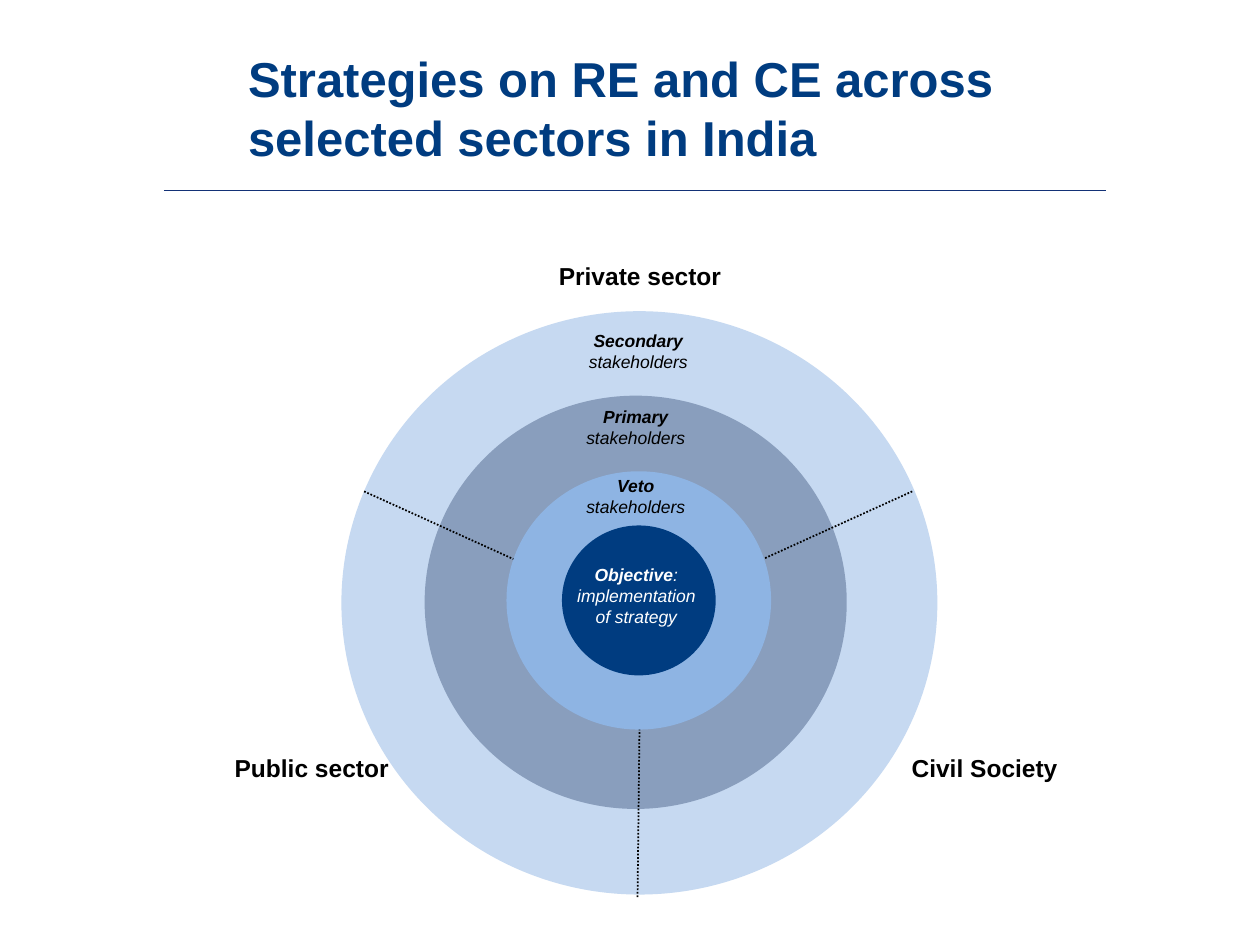
from lxml import etree
from pptx import Presentation
from pptx.dml.color import RGBColor
from pptx.enum.dml import MSO_LINE
from pptx.enum.shapes import MSO_CONNECTOR, MSO_SHAPE
from pptx.enum.text import MSO_ANCHOR, PP_ALIGN
from pptx.oxml.ns import qn
from pptx.util import Inches, Pt

ELLIPSE = MSO_SHAPE.OVAL
STRAIGHT = MSO_CONNECTOR.STRAIGHT
DOTTED = MSO_LINE.ROUND_DOT
LEFT, CENTER = PP_ALIGN.LEFT, PP_ALIGN.CENTER
TOP, MIDDLE = MSO_ANCHOR.TOP, MSO_ANCHOR.MIDDLE

COLORS = {
    "navy": "003C80",
    "rule": "133176",
    "secondary": "C6D9F1",
    "primary": "899EBD",
    "veto": "8EB4E3",
    "black": "000000",
    "white": "FFFFFF",
}


class SlideBuilder:
    """Holds the style and the current slide."""

    font = "Arial"

    def __init__(self, slide):
        self.slide = slide

    def color(self, name):
        return RGBColor.from_string(COLORS[name])

    def text(self, box, paragraphs, size, color="black", align=CENTER,
             anchor=TOP, wrap=False, side_inset=0.1):
        """Each paragraph is a list of (text, bold, italic) runs."""
        frame = self.slide.shapes.add_textbox(*map(Inches, box)).text_frame
        frame.word_wrap = wrap
        frame.vertical_anchor = anchor
        frame.margin_left = frame.margin_right = Inches(side_inset)
        for index, runs in enumerate(paragraphs):
            paragraph = frame.add_paragraph() if index else frame.paragraphs[0]
            paragraph.alignment = align
            for words, bold, italic in runs:
                run = paragraph.add_run()
                run.text = words
                run.font.name = self.font
                run.font.size = Pt(size)
                run.font.bold = bold
                run.font.italic = italic
                run.font.color.rgb = self.color(color)

    def disc(self, box, color):
        disc = self.slide.shapes.add_shape(ELLIPSE, *map(Inches, box))
        disc.shadow.inherit = False
        disc.fill.solid()
        disc.fill.fore_color.rgb = self.color(color)
        disc.line.fill.background()

    def line(self, start, end, color="black", width=1, dash=None):
        line = self.slide.shapes.add_connector(
            STRAIGHT, *map(Inches, start + end))
        line.line.color.rgb = self.color(color)
        line.line.width = Pt(width)
        if dash is not None:
            line.line.dash_style = dash
        etree.SubElement(line._element.spPr, qn("a:effectLst"))

    def sector(self, left, top, width, name):
        self.text((left, top, width, 0.34), [[(name, True, False)]], 14)

    def stakeholders(self, left, top, level):
        self.text((left, top, 0.99, 0.44),
                  [[(level, True, True)], [("stakeholders", False, True)]], 10)


def main():
    prs = Presentation()
    prs.slide_width, prs.slide_height = Inches(10), Inches(7.5)
    builder = SlideBuilder(prs.slides.add_slide(prs.slide_layouts[6]))

    # Title and rule
    builder.line((1.3, 1.51), (8.78, 1.51), "rule", 0.75)
    title = "Strategies on RE and CE across selected sectors in India"
    builder.text((1.87, 0.3, 6.91, 1.11), [[(title, True, False)]], 28,
                 "navy", LEFT, MIDDLE, wrap=True)

    # Outer rings
    builder.disc((2.71, 2.47, 4.73, 4.63), "secondary")
    builder.disc((3.37, 3.14, 3.35, 3.28), "primary")
    builder.stakeholders(4.57, 2.57, "Secondary")
    builder.stakeholders(4.55, 3.17, "Primary")

    # Sector dividers, from the rim to the veto ring
    for rim, inner in (((2.89, 3.9), (4.5, 4.63)),
                       ((7.24, 3.9), (5.63, 4.63)),
                       ((5.06, 7.12), (5.08, 5.38))):
        builder.line(rim, inner, dash=DOTTED)

    # Sector names
    builder.sector(4.33, 2.02, 1.5, "Private sector")
    builder.sector(7.13, 5.93, 1.37, "Civil Society")
    builder.sector(1.76, 5.93, 1.43, "Public sector")

    # Veto ring and objective
    builder.disc((4.02, 3.74, 2.1, 2.05), "veto")
    builder.disc((4.46, 4.17, 1.22, 1.19), "navy")
    objective = [("Objective", True, True),
                 (": implementation of strategy", False, True)]
    builder.text((4.48, 4.43, 1.14, 0.61), [objective], 10, "white",
                 wrap=True, side_inset=0.08)
    builder.stakeholders(4.55, 3.72, "Veto")

    prs.save("out.pptx")


if __name__ == "__main__":
    main()
